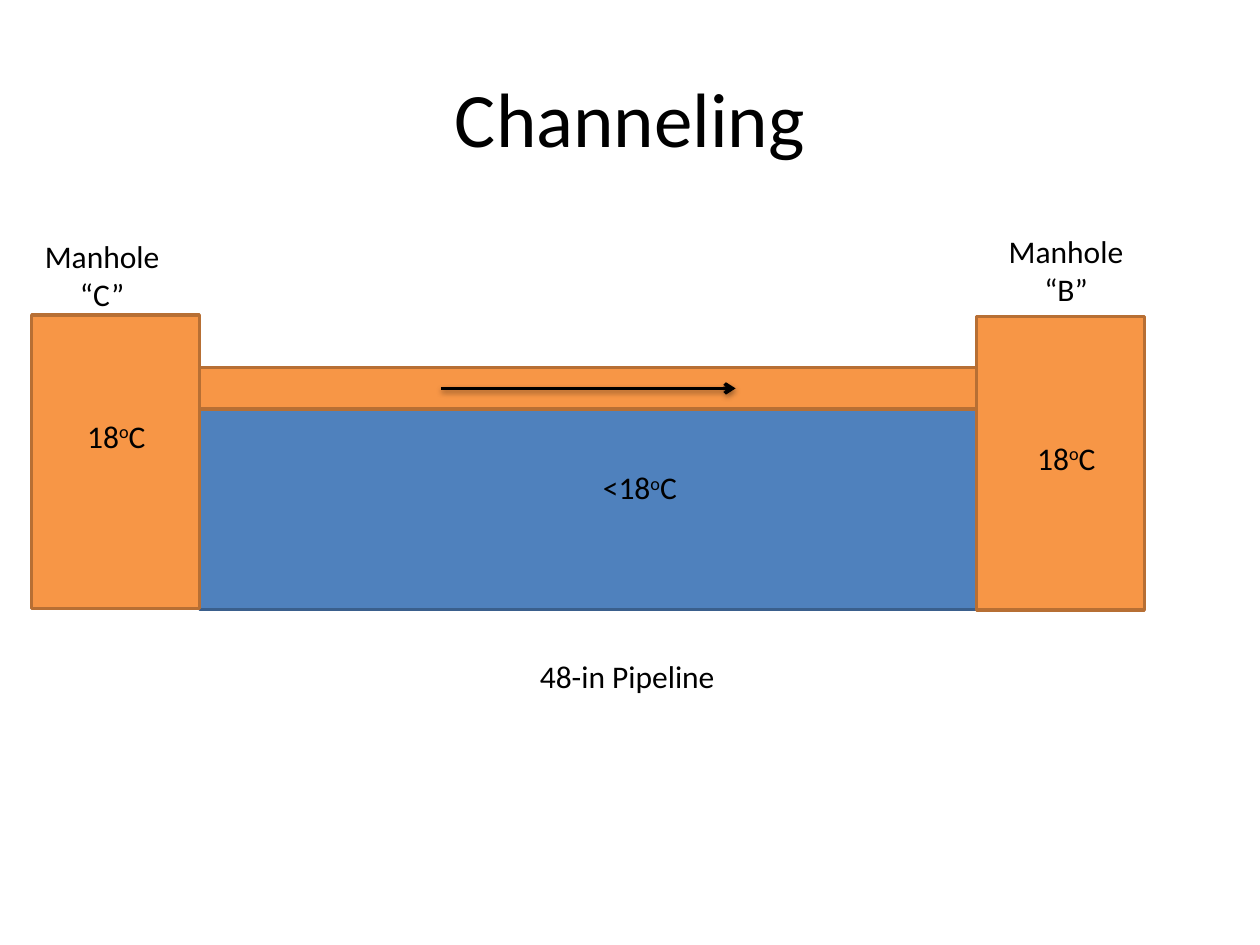
from lxml import etree
from pptx import Presentation
from pptx.dml.color import RGBColor
from pptx.enum.shapes import MSO_CONNECTOR, MSO_SHAPE
from pptx.enum.text import MSO_ANCHOR, MSO_AUTO_SIZE, PP_ALIGN
from pptx.oxml import parse_xml
from pptx.oxml.ns import nsdecls, qn
from pptx.util import Cm, Pt

RECTANGLE = MSO_SHAPE.RECTANGLE
STRAIGHT = MSO_CONNECTOR.STRAIGHT
CENTER = PP_ALIGN.CENTER
MIDDLE = MSO_ANCHOR.MIDDLE
FIT_SHAPE = MSO_AUTO_SIZE.SHAPE_TO_FIT_TEXT

BLACK = RGBColor(0x00, 0x00, 0x00)
COLD = RGBColor(0x4F, 0x81, 0xBD)
COLD_EDGE = RGBColor(0x3A, 0x5F, 0x8C)
WARM = RGBColor(0xF7, 0x96, 0x46)
WARM_EDGE = RGBColor(0xB7, 0x6F, 0x34)

EDGE_WIDTH = Pt(2)
LINE_HEIGHT = 1.02
MANHOLE_SIZE = (3.38, 5.92)
ARROW_SHADOW = (
    f'<a:effectLst {nsdecls("a")}>'
    '<a:outerShdw blurRad="40000" dist="20000" dir="5400000" rotWithShape="0">'
    '<a:srgbClr val="000000"><a:alpha val="38000"/></a:srgbClr>'
    '</a:outerShdw></a:effectLst>'
)


def format_font(font, size):
    """Apply the slide's typeface and text colour at the given size."""
    for attribute, value in {"name": "Calibri", "size": Pt(size)}.items():
        setattr(font, attribute, value)
    font.color.rgb = BLACK


def add_block(slide, box, fill, edge):
    """Draw an outlined rectangle in the box."""
    block = slide.shapes.add_shape(RECTANGLE, *map(Cm, box))
    block.shadow.inherit = False
    block.fill.solid()
    block.fill.fore_color.rgb = fill
    block.line.color.rgb = edge
    block.line.width = EDGE_WIDTH


def add_label(slide, box, lines):
    """Write centred lines, each a list of (text, is_superscript) pieces."""
    frame = slide.shapes.add_textbox(*map(Cm, box)).text_frame
    for attribute, value in {"word_wrap": False, "auto_size": FIT_SHAPE}.items():
        setattr(frame, attribute, value)
    for index, pieces in enumerate(lines):
        paragraph = frame.add_paragraph() if index else frame.paragraphs[0]
        paragraph.alignment = CENTER
        for text, is_superscript in pieces:
            run = paragraph.add_run()
            run.text = text
            format_font(run.font, 18)
            if is_superscript:
                run.font._element.set("baseline", "30000")


def degrees(value):
    """Return one label line with a temperature in Celsius."""
    return [[(value, False), ("o", True), ("C", False)]]


def add_flow_arrow(slide, left, top, length):
    """Draw a shadowed arrow pointing right."""
    arrow = slide.shapes.add_connector(
        STRAIGHT, Cm(left), Cm(top), Cm(left + length), Cm(top)
    )
    arrow.line.color.rgb = BLACK
    arrow.line.width = EDGE_WIDTH
    outline = arrow.line._get_or_add_ln()
    etree.SubElement(outline, qn("a:tailEnd"), type="arrow")
    outline.addnext(parse_xml(ARROW_SHADOW))


def add_title(slide, box):
    """Place and format the slide title."""
    title = slide.shapes.title
    for attribute, value in zip(("left", "top", "width", "height"), box):
        setattr(title, attribute, Cm(value))
    frame = title.text_frame
    frame.text = "Channeling"
    frame.vertical_anchor = MIDDLE
    frame.paragraphs[0].alignment = CENTER
    format_font(frame.paragraphs[0].runs[0].font, 44)


def add_pipeline(slide, box):
    """Draw the cold pipe with its warm top channel, flow arrow and labels."""
    left, top, width, height = box
    channel_height = 0.84
    add_block(slide, box, COLD, COLD_EDGE)
    add_block(slide, (left, top, width, channel_height), WARM, WARM_EDGE)
    add_flow_arrow(slide, left + 4.88, top + channel_height / 2, 5.93)
    add_label(slide, (left + 7.85, top + 1.91, 2.06, LINE_HEIGHT), degrees("<18"))
    add_label(
        slide,
        (left + 6.58, top + height + 0.83, 4.09, LINE_HEIGHT),
        [[("48-in Pipeline", False)]],
    )


def add_manhole(slide, box, letter, name_offset, temperature_offset):
    """Draw a warm manhole with its name above and its temperature inside."""
    left, top = box[:2]
    name_x, name_y = name_offset
    temperature_x, temperature_y = temperature_offset
    add_block(slide, box, WARM, WARM_EDGE)
    add_label(
        slide,
        (left + name_x, top + name_y, 2.84, 1.8),
        [[("Manhole", False)], [(f"“{letter}”", False)]],
    )
    add_label(
        slide,
        (left + temperature_x, top + temperature_y, 1.73, LINE_HEIGHT),
        degrees("18"),
    )


def main():
    """Build and save the slide."""
    presentation = Presentation()
    presentation.slide_width = Cm(25.4)
    presentation.slide_height = Cm(19.05)
    slide = presentation.slides.add_slide(presentation.slide_layouts[5])
    add_title(slide, (1.27, 0.76, 22.86, 3.18))
    add_pipeline(slide, (4.02, 7.41, 15.67, 4.88))
    add_manhole(slide, (0.64, 6.35, *MANHOLE_SIZE), "C", (0, -1.7), (0.84, 1.93))
    add_manhole(slide, (19.69, 6.38, *MANHOLE_SIZE), "B", (0.38, -1.83), (0.94, 2.34))
    presentation.save("out.pptx")


if __name__ == "__main__":
    main()
